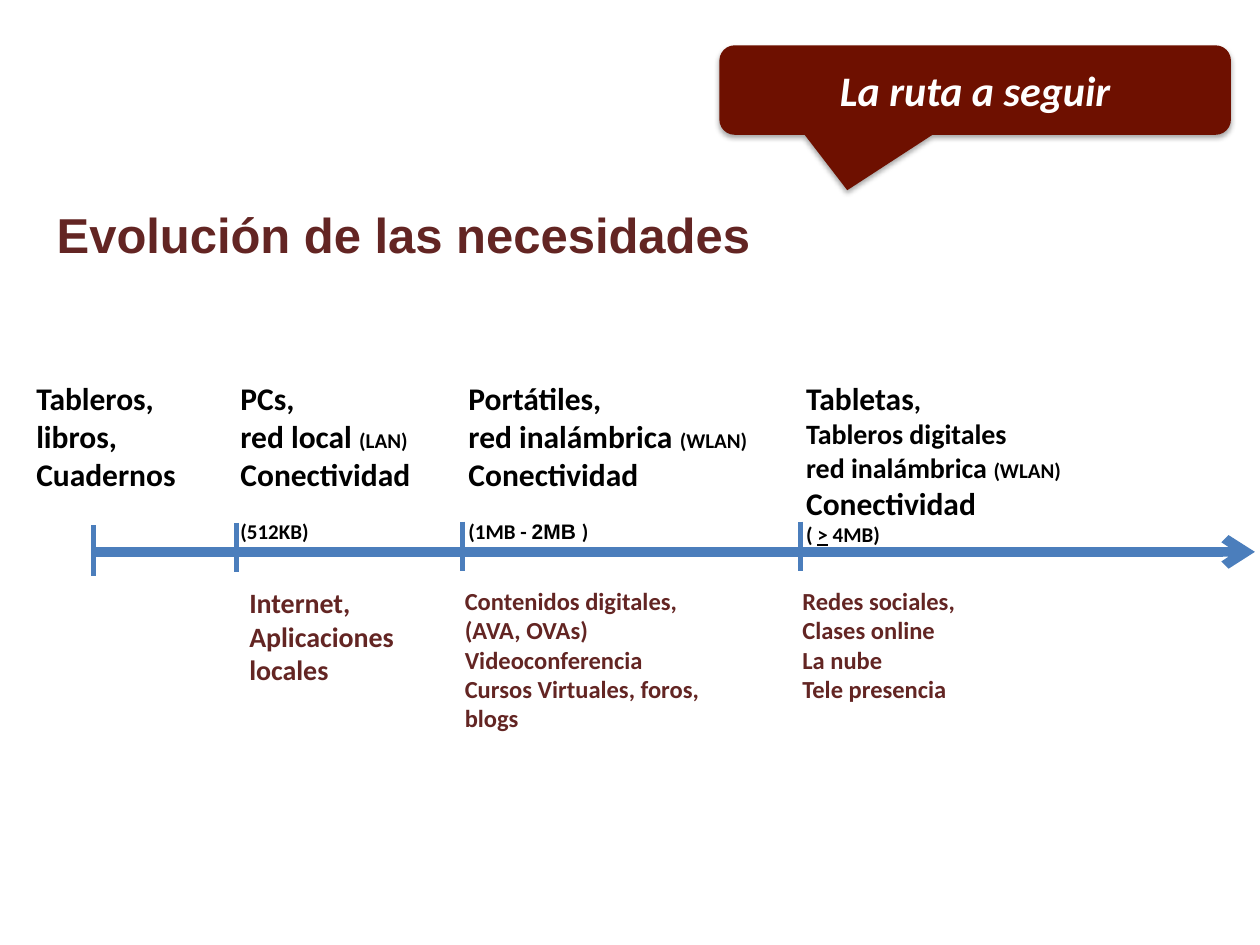
"""Build a slide with a timeline of how technology needs have evolved."""
import pptx
import pptx.dml.color
import pptx.enum.shapes
import pptx.enum.text
import pptx.oxml
import pptx.oxml.ns
import pptx.util
from lxml import etree

Inches = pptx.util.Inches
Pt = pptx.util.Pt
RGBColor = pptx.dml.color.RGBColor
ALIGN = pptx.enum.text.PP_ALIGN
MIDDLE = pptx.enum.text.MSO_ANCHOR.MIDDLE
qn = pptx.oxml.ns.qn

BLACK = RGBColor(0x00, 0x00, 0x00)
WHITE = RGBColor(0xFF, 0xFF, 0xFF)
BLUE = RGBColor(0x4B, 0x7E, 0xBC)
WINE = RGBColor(0x63, 0x25, 0x23)
BRICK = RGBColor(0x6E, 0x10, 0x00)


def add_run(para, text, size, color, **extra):
    run = para.add_run()
    run.text = text
    run.font.color.rgb = color
    form = {"size": Pt(size), "name": "Calibri", "bold": True, **extra}
    for key, value in form.items():
        setattr(run.font, key, value)


def add_line(x1, y1, x2, y2, width):
    ends = [Inches(n) for n in (x1, y1, x2, y2)]
    line = slide.shapes.add_connector(
        pptx.enum.shapes.MSO_CONNECTOR.STRAIGHT, *ends)
    line.line.color.rgb = BLUE
    line.line.width = Pt(width)
    etree.SubElement(line._element.spPr, qn("a:effectLst"))
    return line


deck = pptx.Presentation()
deck.slide_width = Inches(10)
deck.slide_height = Inches(7.5)
slide = deck.slides.add_slide(deck.slide_layouts[5])

title = slide.shapes.title
place = {"left": 0.35, "top": 1.45, "width": 9.45, "height": 0.81}
for key, value in place.items():
    setattr(title, key, Inches(value))
title.text_frame.vertical_anchor = MIDDLE
para = title.text_frame.paragraphs[0]
para.alignment = ALIGN.LEFT
add_run(para, "Evolución de las necesidades", 28, WINE, name="Arial")

call = slide.shapes.add_shape(
    pptx.enum.shapes.MSO_SHAPE.ROUNDED_RECTANGULAR_CALLOUT,
    Inches(5.71), Inches(0.36), Inches(4.06), Inches(0.71))
for index, value in enumerate((-0.25, 1.12, 0.17)):
    call.adjustments[index] = value
call.fill.solid()
call.fill.fore_color.rgb = BRICK
call.line.fill.background()
call.shadow.inherit = False
glow = etree.SubElement(
    call._element.spPr.find(qn("a:effectLst")), qn("a:outerShdw"),
    blurRad=str(Pt(3.1)), dist=str(Pt(1.8)), dir="5400000", rotWithShape="0")
tint = etree.SubElement(glow, qn("a:srgbClr"), val="000000")
etree.SubElement(tint, qn("a:alpha"), val="35000")
call.text_frame.vertical_anchor = MIDDLE
para = call.text_frame.paragraphs[0]
para.alignment = ALIGN.CENTER
add_run(para, "La ruta a seguir", 24, WHITE, italic=True)

axis = add_line(0.74, 4.38, 9.96, 4.38, 5.5)
etree.SubElement(axis.line._get_or_add_ln(), qn("a:tailEnd"), type="arrow")
for x, top, base in ((0.74, 4.17, 4.57), (1.88, 4.15, 4.54),
                     (3.67, 4.14, 4.53), (6.35, 4.14, 4.53)):
    add_line(x, top, x, base, 2.75)

TOOLS, USES = 2.96, 4.6
LINK = [("Conectividad", 18)]
WLAN = ("(WLAN)", 12)
notes = [
    (0.19, TOOLS, 1.57, 1.01, BLACK, 0,
     [[("Tableros,", 18)], [("libros,", 18)], [("Cuadernos", 18)]]),
    (1.81, TOOLS, 1.81, 1.41, BLACK, 14.6,
     [[("PCs,", 18)], [("red local ", 18), ("(LAN)", 12)], LINK,
      [("(512KB)", 12)]]),
    (3.62, TOOLS, 2.44, 1.41, BLACK, 14.6,
     [[("Portátiles,", 18)], [("red inalámbrica ", 18), WLAN], LINK,
      [("(1MB - ", 12), ("2MB ", 12, {"name": "Arial"}), (")", 12)]]),
    (6.3, TOOLS, 2.44, 1.45, BLACK, 0,
     [[("Tabletas", 18), (",", 16)], [("Tableros digitales", 16)],
      [("red inalámbrica ", 16), WLAN], LINK,
      [("( ", 12), (">", 12, {"underline": True}), (" 4MB)", 12)]]),
    (1.88, USES, 1.42, 0.91, WINE, 0,
     [[("Internet,", 16)], [("Aplicaciones locales", 16)]]),
    (3.59, USES, 2.25, 1.28, WINE, 0,
     [[("Contenidos digitales, (AVA, OVAs)", 14)], [("Videoconferencia", 14)],
      [("Cursos Virtuales, foros, blogs", 14)]]),
    (6.27, USES, 1.97, 1.04, WINE, 0,
     [[("Redes sociales,", 14)], [("Clases online", 14)],
      [("La nube", 14)], [("Tele presencia", 14)]]),
]
for left, top, width, height, color, gap, rows in notes:
    box = slide.shapes.add_textbox(
        Inches(left), Inches(top), Inches(width), Inches(height))
    frame = box.text_frame
    frame.word_wrap = True
    for index, row in enumerate(rows):
        para = frame.add_paragraph() if index else frame.paragraphs[0]
        for text, size, *extra in row:
            add_run(para, text, size, color, **(extra[0] if extra else {}))
    if gap:
        para.space_before = Pt(gap)

deck.save("out.pptx")
